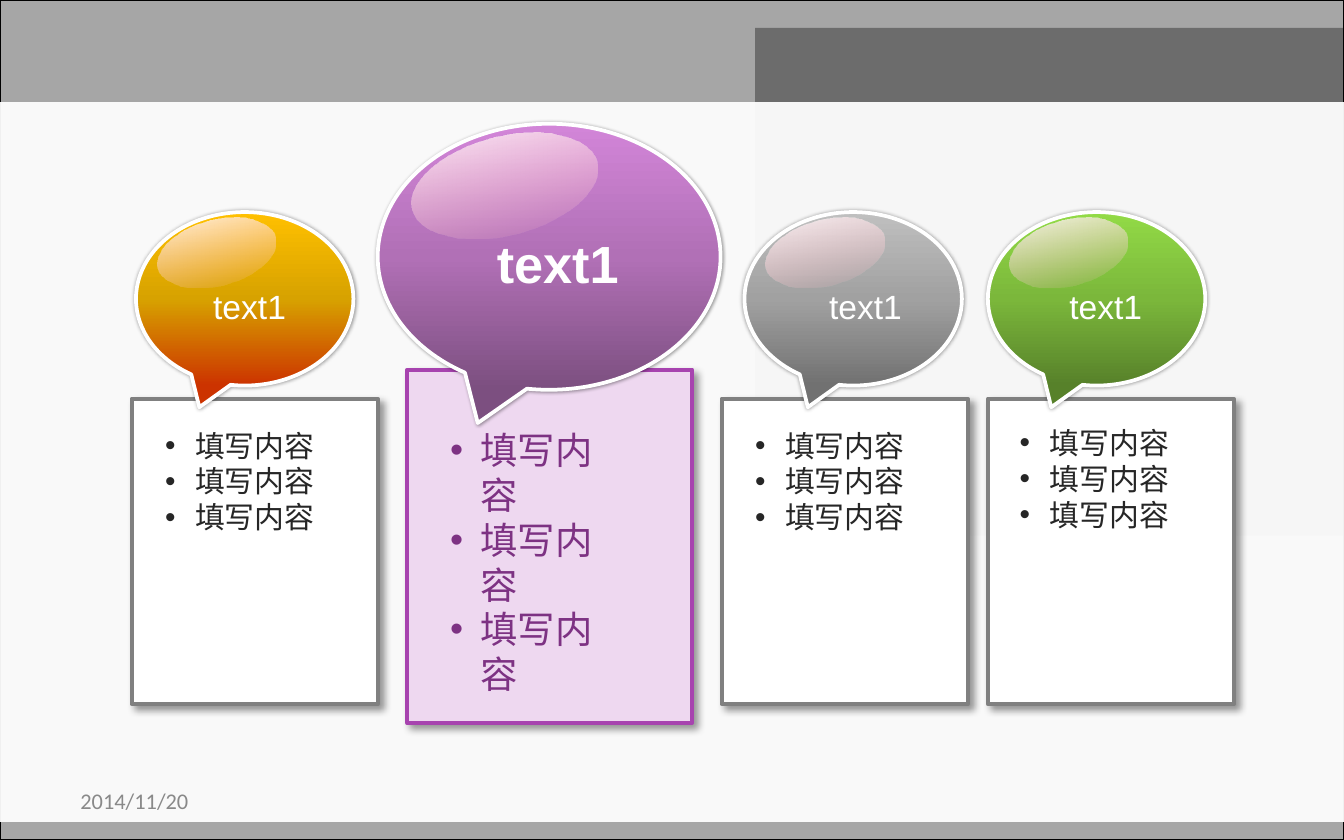
from lxml import etree
from pptx import Presentation
from pptx.dml.color import RGBColor
from pptx.enum.shapes import MSO_SHAPE
from pptx.enum.text import MSO_ANCHOR
from pptx.oxml.ns import qn
from pptx.util import Cm, Pt

RECTANGLE = MSO_SHAPE.RECTANGLE
OVAL = MSO_SHAPE.OVAL
CALLOUT = MSO_SHAPE.OVAL_CALLOUT
TOP, MIDDLE = MSO_ANCHOR.TOP, MSO_ANCHOR.MIDDLE

THEME = {
    "black": "000000", "white": "FFFFFF", "date": "898989",
    "card_line": "808080", "body": "262626",
    "accent_card": "EED8F0", "accent_line": "A743AF", "accent_body": "7D3283",
    "orange": ("CC3300", "D7A200", "FFC000"),
    "purple": ("7C4F80", "B170B6", "D285D8"),
    "gray": ("717171", "A1A1A1", "BFBFBF"),
    "green": ("57812A", "7BB73B", "92DA46"),
    "gloss": "FFAFBC",
    "latin": "Arial", "cjk": "Noto Sans CJK SC", "date_font": "Calibri",
    "date_size": 12, "label_size": 18, "body_size": 16,
    "big_label_size": 28, "big_body_size": 20,
}

deck = Presentation()
deck.slide_width, deck.slide_height = Cm(25.4), Cm(15.88)
page = deck.slides.add_slide(deck.slide_layouts[6])


def add_panel(kind, bounds, stops, angle=0, line=None, width=0, shadow=None):
    """Stops are (position, colour, opacity); shadow is (blur, distance, angle)."""
    shape = page.shapes.add_shape(kind, *[Cm(value) for value in bounds])
    if len(stops) == 1:
        shape.fill.solid()
        shape.fill.fore_color.rgb = RGBColor.from_string(stops[0][1])
        colors = shape._element.spPr.findall(qn("a:solidFill") + "/" + qn("a:srgbClr"))
    else:
        shape.fill.gradient()
        shape.fill.gradient_angle = angle
        stop_list = shape._element.spPr.find(".//" + qn("a:gsLst"))
        for old_stop in list(stop_list):
            stop_list.remove(old_stop)
        colors = []
        for position, color, _ in stops:
            stop = etree.SubElement(stop_list, qn("a:gs"), pos=str(position * 1000))
            colors.append(etree.SubElement(stop, qn("a:srgbClr"), val=color))
    for node, (_, _, opacity) in zip(colors, stops):
        if opacity < 100:
            etree.SubElement(node, qn("a:alpha"), val=str(opacity * 1000))
    if line:
        shape.line.color.rgb = RGBColor.from_string(line)
        shape.line.width = Pt(width)
    else:
        shape.line.fill.background()
    shape.shadow.inherit = False
    if shadow:
        blur, distance, direction = shadow
        effects = shape._element.spPr.find(qn("a:effectLst"))
        outer = etree.SubElement(
            effects, qn("a:outerShdw"), blurRad=str(Pt(blur)), dist=str(Pt(distance)),
            dir=str(direction * 60000), algn="ctr", rotWithShape="0")
        color = etree.SubElement(outer, qn("a:srgbClr"), val=THEME["black"])
        etree.SubElement(color, qn("a:alpha"), val="40000")
    return shape


def add_text(bounds, lines, font, size, color, bold=False, bullets=False,
             wrap=True, anchor=TOP):
    box = page.shapes.add_textbox(*[Cm(value) for value in bounds])
    frame = box.text_frame
    frame.word_wrap = wrap
    frame.vertical_anchor = anchor
    for index, line in enumerate(lines):
        para = frame.paragraphs[0] if index == 0 else frame.add_paragraph()
        if bullets:
            frame.margin_top = Cm(0.18)
            props = para._p.get_or_add_pPr()
            props.set("marL", str(Cm(0.57)))
            props.set("indent", str(-Cm(0.57)))
            etree.SubElement(props, qn("a:buFont"), typeface=THEME["latin"])
            etree.SubElement(props, qn("a:buChar"), char="•")
            para.line_spacing = Pt(size * 1.2)
        span = para.add_run()
        span.text = line
        span.font.name = font
        span.font.size = Pt(size)
        span.font.bold = bold
        span.font.color.rgb = RGBColor.from_string(color)
        etree.SubElement(span._r.get_or_add_rPr(), qn("a:ea"), typeface=font)


# Backdrop: two dark layers under a nearly opaque white sheet
add_panel(RECTANGLE, (0, 0, 25.4, 15.88), [(0, THEME["black"], 35)],
          line=THEME["black"], width=0.75)
add_panel(RECTANGLE, (14.27, 0.53, 11.13, 9.6), [(0, THEME["black"], 35)])
add_panel(RECTANGLE, (0, 1.93, 25.4, 13.61), [(0, THEME["white"], 94)])

# Date
add_text((1.27, 14.71, 5.92, 0.84), ["2014/11/20"], THEME["date_font"],
         THEME["date_size"], THEME["date"], anchor=MIDDLE)

# Columns: (top, width, height) of each part, for plain and highlighted ones
PLAIN = {
    "card": (7.54, 4.65, 5.77), "bubble": (4.01, 4.11, 3.28),
    "gloss": (3.63, 1.22, 2.29), "gloss_shift": 0.91,
    "label": (5.28, 1.9, 1.02), "list": (7.9, 3.71, 3.68),
    "fill": THEME["white"], "line": THEME["card_line"], "color": THEME["body"],
    "label_size": THEME["label_size"], "body_size": THEME["body_size"], "bold": False,
}
HIGHLIGHT = {
    "card": (6.99, 5.38, 6.68), "bubble": (2.34, 6.48, 5.03),
    "gloss": (1.7, 1.85, 3.61), "gloss_shift": 1.47,
    "label": (4.24, 2.84, 1.45), "list": (7.9, 3.71, 4.52),
    "fill": THEME["accent_card"], "line": THEME["accent_line"],
    "color": THEME["accent_body"], "label_size": THEME["big_label_size"],
    "body_size": THEME["big_body_size"], "bold": True,
}
# Style, bubble colours, then left edges of card, bubble, label and list
COLUMNS = [
    (PLAIN, "orange", 2.49, 2.57, 3.78, 2.87),
    (HIGHLIGHT, "purple", 7.7, 7.14, 9.14, 8.26),
    (PLAIN, "gray", 13.64, 14.07, 15.42, 14.02),
    (PLAIN | {"list": (7.85, 3.71, 3.68)}, "green", 18.67, 18.67, 19.96, 19.02),
]
for style, hue, card_left, bubble_left, label_left, list_left in COLUMNS:
    add_panel(RECTANGLE, (card_left, *style["card"]), [(0, style["fill"], 100)],
              line=style["line"], width=2.25, shadow=(4, 3, 45))
    bubble_stops = [(place, color, 100) for place, color in zip((0, 50, 100), THEME[hue])]
    add_panel(CALLOUT, (bubble_left, *style["bubble"]), bubble_stops, angle=90,
              line=THEME["white"], width=2, shadow=(2, 0, 0))
    gloss = add_panel(OVAL, (bubble_left + style["gloss_shift"], *style["gloss"]),
                      [(0, THEME["white"], 91), (100, THEME["gloss"], 0)])
    gloss.rotation = 75.9
    add_text((label_left, *style["label"]), ["text1"], THEME["latin"],
             style["label_size"], THEME["white"], bold=style["bold"], wrap=False)
    add_text((list_left, *style["list"]), ["填写内容"] * 3, THEME["cjk"],
             style["body_size"], style["color"], bullets=True)

deck.save("out.pptx")
